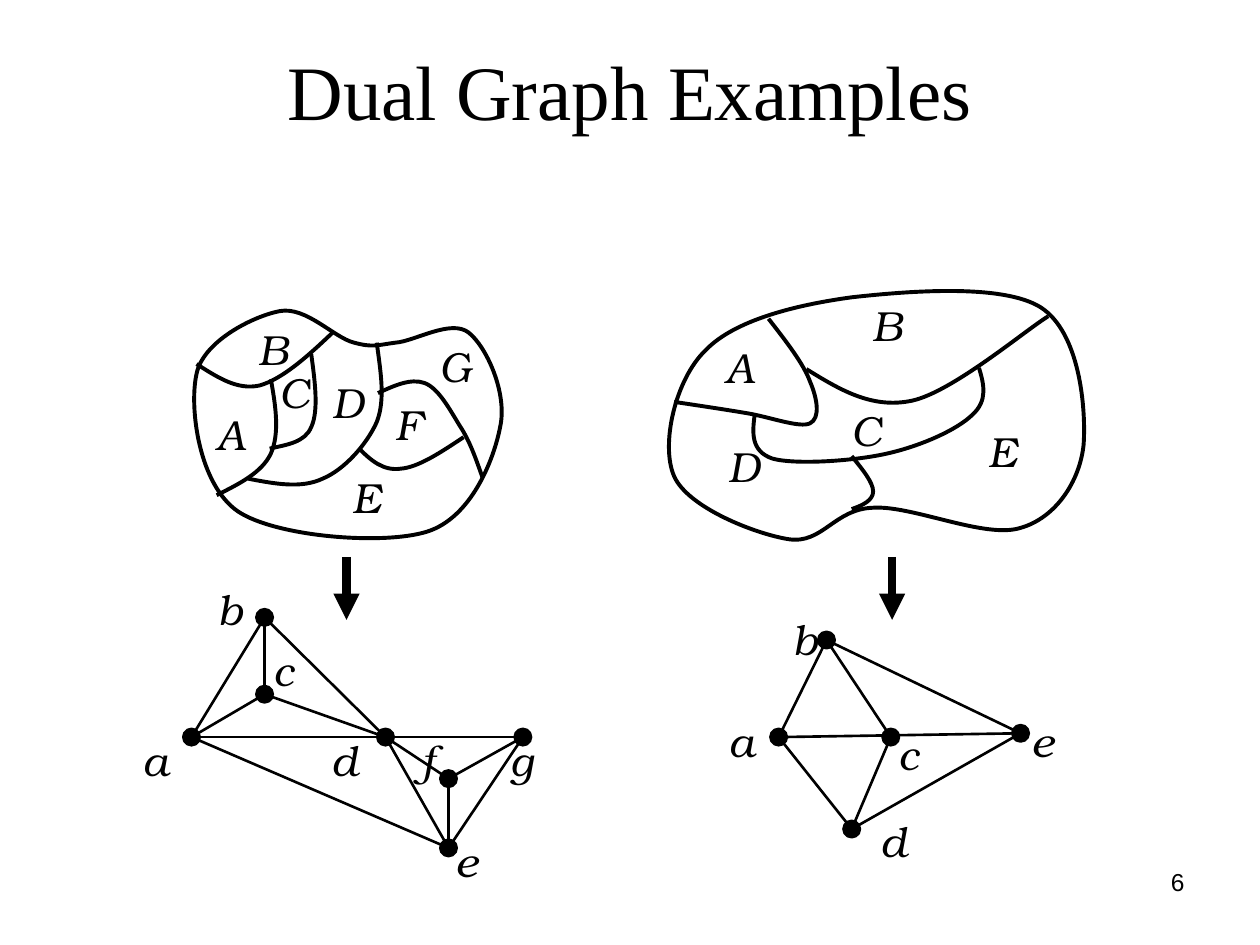
"""Build a slide of two planar maps, each above its dual graph."""
from lxml import etree
from pptx import Presentation
from pptx.dml.color import RGBColor
from pptx.enum.shapes import MSO_CONNECTOR, MSO_SHAPE
from pptx.enum.text import MSO_ANCHOR, PP_ALIGN
from pptx.oxml.ns import qn
from pptx.util import Cm, Pt

STRAIGHT, ELLIPSE = MSO_CONNECTOR.STRAIGHT, MSO_SHAPE.OVAL
TOP, MIDDLE = MSO_ANCHOR.TOP, MSO_ANCHOR.MIDDLE
LEFT, CENTER, RIGHT = PP_ALIGN.LEFT, PP_ALIGN.CENTER, PP_ALIGN.RIGHT
BLACK = RGBColor(0, 0, 0)
TITLE_FONT = {"name": "Times New Roman", "size": Pt(44)}
LABEL_FONT = {"name": "TeX Gyre Bonum", "size": Pt(24), "italic": True}
NUMBER_FONT = {"name": "Arial", "size": Pt(14)}
LABEL_SIZE = (0.45, 0.5)
NODE_SIZE = 0.13

SEVEN_REGION_BORDERS = [
    (3.14, 2.72, 2.99, 2.74, 2.96, 2.76, 2.81, 2.72, 2.65, 2.68, 2.43, 2.43, 2.22, 2.47,
     2.01, 2.51, 1.61, 2.71, 1.56, 2.97, 1.5, 3.24, 1.58, 3.85, 1.89, 4.06,
     2.19, 4.26, 3.04, 4.33, 3.39, 4.22, 3.74, 4.11, 3.92, 3.65, 3.97, 3.39,
     4.03, 3.12, 3.86, 2.75, 3.72, 2.64, 3.58, 2.53, 3.29, 2.71, 3.14, 2.72),
    (1.56, 2.89, 1.72, 2.99, 1.88, 3.1, 2.06, 3.06, 2.24, 3.01, 2.44, 2.83, 2.64, 2.64),
    (2.15, 3.01, 2.19, 3.23, 2.22, 3.44, 2.15, 3.6, 2.08, 3.75, 1.9, 3.84, 1.72, 3.93),
    (2.14, 3.56, 2.28, 3.53, 2.42, 3.51, 2.47, 3.39, 2.53, 3.26, 2.5, 3.03, 2.47, 2.81),
    (1.97, 3.8, 2.18, 3.84, 2.39, 3.88, 2.56, 3.8, 2.73, 3.73, 2.91, 3.53, 2.99, 3.35,
     3.06, 3.17, 3.02, 2.95, 2.99, 2.72),
    (3, 3.12, 3.13, 3.06, 3.26, 3, 3.37, 3.04, 3.48, 3.08, 3.57, 3.25, 3.65, 3.38,
     3.73, 3.5, 3.78, 3.65, 3.83, 3.79),
    (2.85, 3.56, 2.94, 3.65, 3.04, 3.74, 3.18, 3.72, 3.32, 3.71, 3.5, 3.59, 3.68, 3.47),
]
FIVE_REGION_BORDERS = [
    (5.6, 2.78, 5.83, 2.54, 6.32, 2.42, 6.76, 2.36, 7.21, 2.31, 7.96, 2.25, 8.26, 2.44,
     8.57, 2.64, 8.62, 3.24, 8.6, 3.53, 8.57, 3.82, 8.38, 4.11, 8.1, 4.19,
     7.82, 4.28, 7.24, 4.01, 6.93, 4.03, 6.62, 4.04, 6.53, 4.32, 6.26, 4.28,
     6, 4.24, 5.46, 4.03, 5.35, 3.78, 5.24, 3.53, 5.36, 3.01, 5.6, 2.78),
    (5.35, 3.19, 5.55, 3.22, 5.75, 3.25, 5.93, 3.28, 6.11, 3.31, 6.35, 3.4, 6.43, 3.36,
     6.51, 3.32, 6.49, 3.17, 6.43, 3.03, 6.38, 2.89, 6.24, 2.71, 6.1, 2.53),
    (6.4, 2.93, 6.66, 3.09, 6.92, 3.25, 7.24, 3.18, 7.56, 3.11, 8.14, 2.62, 8.32, 2.51),
    (5.99, 3.29, 5.97, 3.44, 5.96, 3.58, 6.13, 3.64, 6.31, 3.69, 6.78, 3.66, 7.04, 3.6,
     7.31, 3.54, 7.6, 3.41, 7.72, 3.29, 7.84, 3.18, 7.81, 3.05, 7.77, 2.92),
    (6.76, 3.62, 6.85, 3.73, 6.93, 3.83, 6.93, 3.9, 6.93, 3.97, 6.85, 4.01, 6.76, 4.04),
]
SEVEN_REGIONS = {"A": (1.62, 3.19), "B": (1.95, 2.52), "C": (2.12, 2.86), "D": (2.54, 2.94),
                 "E": (2.7, 3.69), "F": (3.04, 3.11), "G": (3.39, 2.65)}
FIVE_REGIONS = {"A": (5.66, 2.66), "B": (6.83, 2.33), "C": (6.66, 3.16), "D": (5.68, 3.45),
                "E": (7.75, 3.33)}
SEVEN_NODES = {"a": (1.52, 5.85), "b": (2.1, 4.9), "c": (2.1, 5.51), "d": (3.06, 5.85),
               "e": (3.56, 6.73), "f": (3.56, 6.18), "g": (4.15, 5.85)}
FIVE_NODES = {"a": (6.18, 5.85), "b": (6.56, 5.08), "c": (7.07, 5.85), "d": (6.76, 6.58),
              "e": (8.1, 5.82)}
SEVEN_NODE_LABELS = {"a": (1.03, 5.78), "b": (1.63, 4.58), "c": (2.07, 5.07), "d": (2.53, 5.78),
                     "e": (3.52, 6.58), "f": (3.24, 5.78), "g": (3.95, 5.78)}
FIVE_NODE_LABELS = {"a": (5.68, 5.63), "b": (6.19, 4.82), "c": (7.03, 5.73), "d": (6.89, 6.42),
                    "e": (8.09, 5.63)}
EXAMPLES = [
    (SEVEN_REGION_BORDERS, SEVEN_REGIONS, SEVEN_NODES, SEVEN_NODE_LABELS,
     "ac bc ab bd cd ag de df gf ge fe ae", 2.75),
    (FIVE_REGION_BORDERS, FIVE_REGIONS, FIVE_NODES, FIVE_NODE_LABELS,
     "ab bc be ae cd ad de", 7.08),
]


def lengths(*inches):
    """Convert inches to slide lengths."""
    return [Cm(value * 2.54) for value in inches]


class GraphSlide:
    """Draw map and graph elements in one style on one slide."""

    def __init__(self, slide, color=BLACK):
        """Keep the slide and its ink colour."""
        self.slide, self.shapes, self.color = slide, slide.shapes, color

    def outline(self, item, points):
        """Set line colour and width."""
        item.line.color.rgb = self.color
        item.line.width = Pt(points)

    def text(self, words, box, font, align=LEFT, anchor=TOP):
        """Add a text box."""
        frame = self.shapes.add_textbox(*lengths(*box)).text_frame
        frame.word_wrap, frame.vertical_anchor = True, anchor
        paragraph = frame.paragraphs[0]
        paragraph.alignment = align
        run = paragraph.add_run()
        run.text = words
        for attribute, value in font.items():
            setattr(run.font, attribute, value)
        run.font.color.rgb = self.color

    def labels(self, places):
        """Add a letter at each place."""
        for letter, place in places.items():
            self.text(letter, (*place, *LABEL_SIZE), LABEL_FONT)

    def border(self, coordinates):
        """Add a cubic Bézier outline, closed when it ends where it starts."""
        values = lengths(*coordinates)
        start, *rest = zip(values[::2], values[1::2])
        builder = self.shapes.build_freeform(*start)
        builder.add_line_segments(rest, close=start == rest[-1])
        curve = builder.convert_to_shape()
        curve.shadow.inherit = False
        curve.fill.background()
        self.outline(curve, 2.25)
        segments = list(curve._element.iter(qn("a:lnTo")))[:len(rest)]
        for first in range(0, len(segments), 3):
            bezier = etree.Element(qn("a:cubicBezTo"))
            segments[first].addprevious(bezier)
            for segment in segments[first:first + 3]:
                bezier.append(segment[0])
                segment.getparent().remove(segment)

    def line(self, start, end, points=1.5, arrow=False):
        """Add a straight line, with an arrowhead if asked."""
        link = self.shapes.add_connector(STRAIGHT, *lengths(*start, *end))
        self.outline(link, points)
        if arrow:
            etree.SubElement(link.line._get_or_add_ln(), qn("a:tailEnd"), type="triangle")
        etree.SubElement(link._element.spPr, qn("a:effectLst"))

    def node(self, x, y):
        """Add a dot centred on a point."""
        corner = (x - NODE_SIZE / 2, y - NODE_SIZE / 2)
        dot = self.shapes.add_shape(ELLIPSE, *lengths(*corner, NODE_SIZE, NODE_SIZE))
        dot.shadow.inherit = False
        dot.fill.solid()
        dot.fill.fore_color.rgb = self.color
        self.outline(dot, 1.5)


def main():
    """Build and save the slide."""
    deck = Presentation()
    deck.slide_width, deck.slide_height = lengths(10, 7.5)
    page = GraphSlide(deck.slides.add_slide(deck.slide_layouts[6]))
    page.text("Dual Graph Examples", (0.5, 0.17, 9, 1.08), TITLE_FONT, CENTER, MIDDLE)
    for borders, regions, nodes, node_labels, edges, arrow_x in EXAMPLES:
        for border in borders:
            page.border(border)
        page.labels(regions)
        for start, end in edges.split():
            page.line(nodes[start], nodes[end])
        for center in nodes.values():
            page.node(*center)
        page.labels(node_labels)
        page.line((arrow_x, 4.42), (arrow_x, 4.92), 5, arrow=True)
    page.text("6", (7.17, 6.83, 2.33, 0.52), NUMBER_FONT, RIGHT)
    deck.save("out.pptx")


if __name__ == "__main__":
    main()
